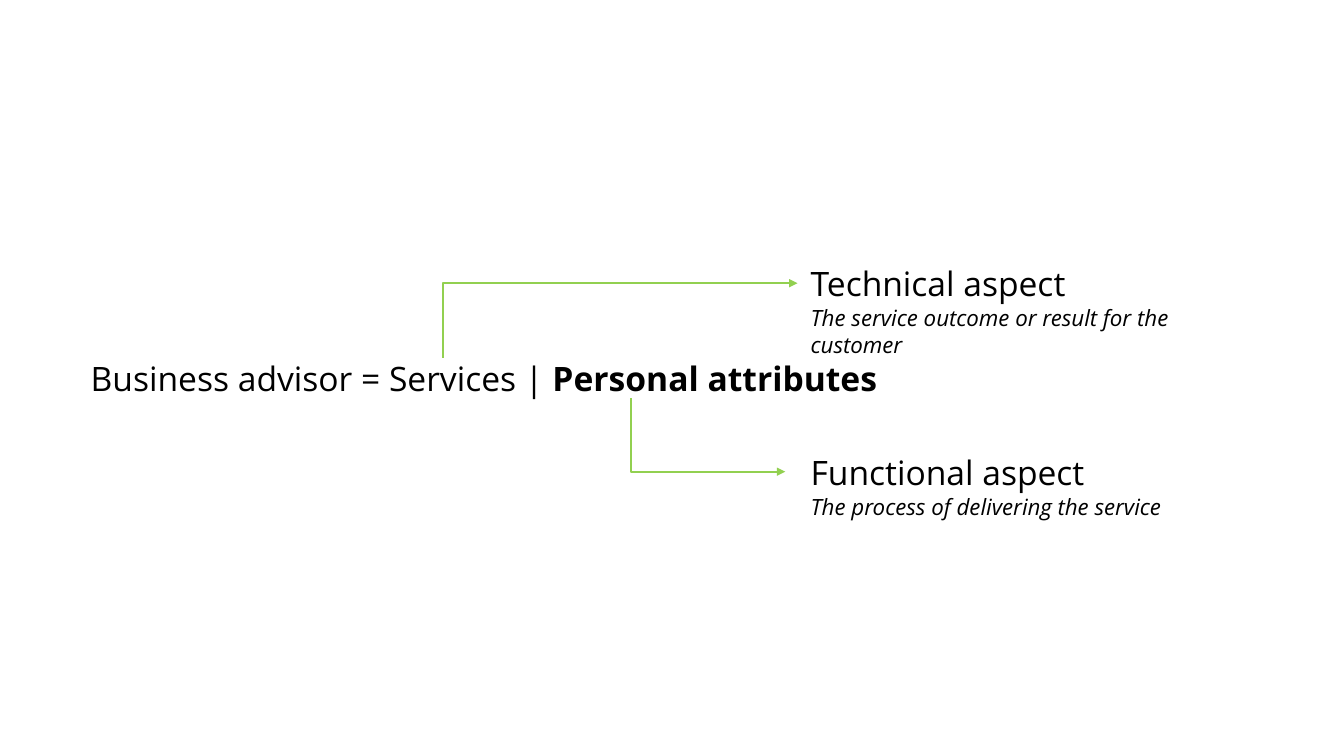
from pptx import Presentation
from pptx.dml.color import RGBColor
from pptx.enum.shapes import MSO_CONNECTOR
from pptx.enum.text import MSO_AUTO_SIZE
from pptx.oxml.ns import qn
from pptx.util import Inches, Pt
from lxml.etree import SubElement

# Content
FORMULA = [("Business advisor = Services | ", False), ("Personal attributes", True)]
ASPECTS = [  # title, description, top, arrow start, arrow end x
    ("Technical aspect", "The service outcome or result for the customer",
     2.61, (4.39, 3.55), 7.91),
    ("Functional aspect", "The process of delivering the service",
     4.48, (6.26, 3.95), 7.79),
]

THEME = {
    "font": "Open Sans",
    "text": RGBColor.from_string("000000"),
    "arrow": RGBColor.from_string("92D050"),
    "title": Pt(24),
    "note": Pt(16),
    "line": Pt(1.5),
}
ASPECT_X = 8.04
TITLE_H, NOTE_H = 0.4, 0.27
NOTE_OFFSET = 0.41

prs = Presentation()
prs.slide_width, prs.slide_height = Inches(13.33), Inches(7.5)
s = prs.slides.add_slide(prs.slide_layouts[6])


def add_text(runs, x, y, w, h, size, italic=None):
    tf = s.shapes.add_textbox(Inches(x), Inches(y), Inches(w), Inches(h)).text_frame
    tf.word_wrap = True
    tf.auto_size = MSO_AUTO_SIZE.SHAPE_TO_FIT_TEXT
    tf.margin_left = tf.margin_right = tf.margin_top = tf.margin_bottom = 0
    p = tf.paragraphs[0]
    p.font.name, p.font.size, p.font.italic = THEME["font"], size, italic
    p.font.color.rgb = THEME["text"]
    for text, bold in runs:
        r = p.add_run()
        r.text = text
        if bold:
            r.font.bold = True


def add_arrow(start, end):
    c = s.shapes.add_connector(MSO_CONNECTOR.ELBOW, *map(Inches, start + end))
    c.line.color.rgb, c.line.width = THEME["arrow"], THEME["line"]
    sp_pr = c._element.spPr
    # Bend at the start, so that the arrow leaves vertically
    guides = sp_pr.find(qn("a:prstGeom")).find(qn("a:avLst"))
    SubElement(guides, qn("a:gd"), name="adj1", fmla="val 0")
    SubElement(sp_pr.find(qn("a:ln")), qn("a:tailEnd"), type="triangle")
    SubElement(sp_pr, qn("a:effectLst"))


# Formula line
add_text(FORMULA, 0.9, 3.55, 11.8, TITLE_H, THEME["title"])

# Aspects, each with its arrow
for title, note, top, start, end_x in ASPECTS:
    add_text([(title, False)], ASPECT_X, top, 2.81, TITLE_H, THEME["title"])
    add_text([(note, False)], ASPECT_X, top + NOTE_OFFSET, 4.5, NOTE_H,
             THEME["note"], italic=True)
    add_arrow(start, (end_x, top + TITLE_H / 2))

prs.save("out.pptx")
